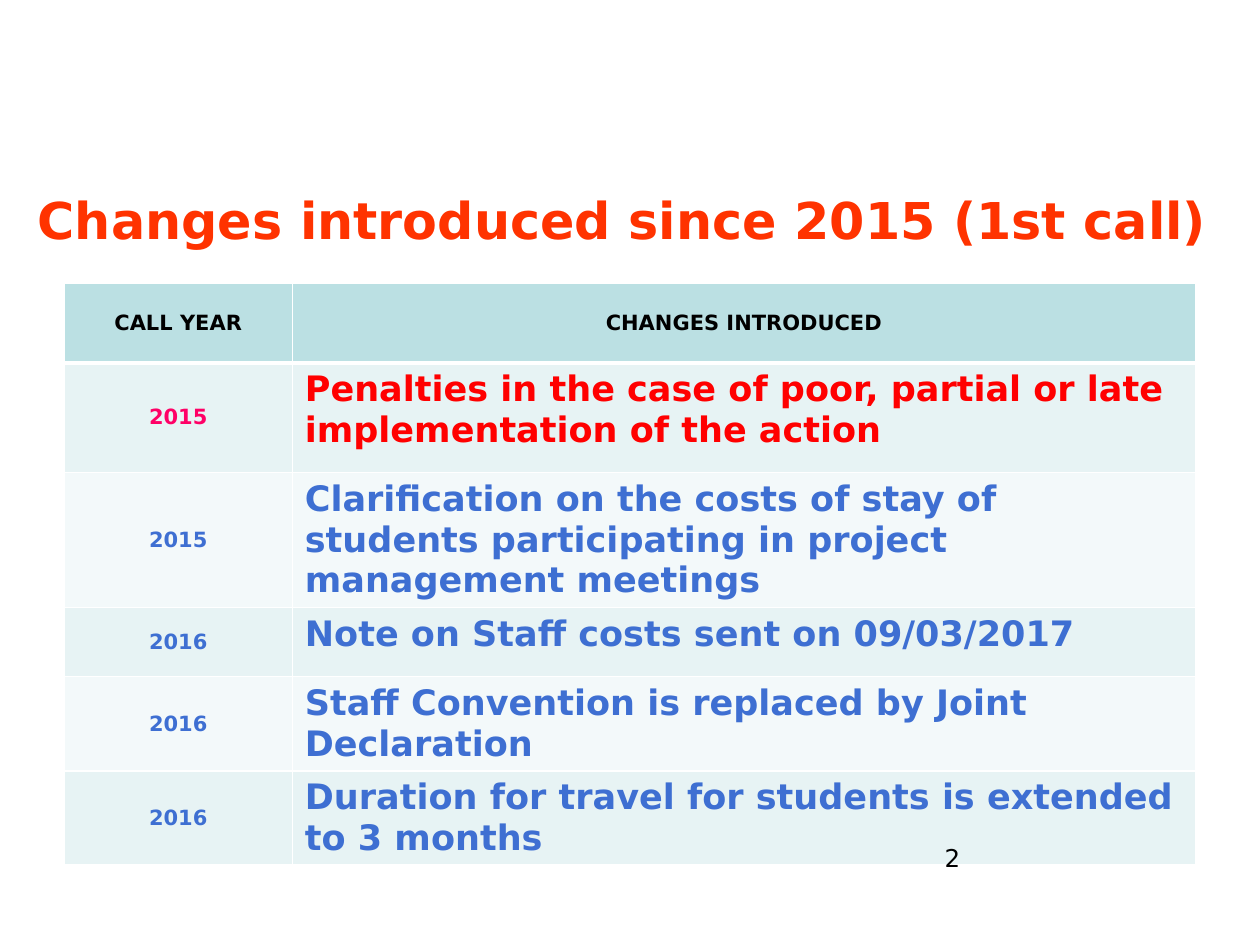
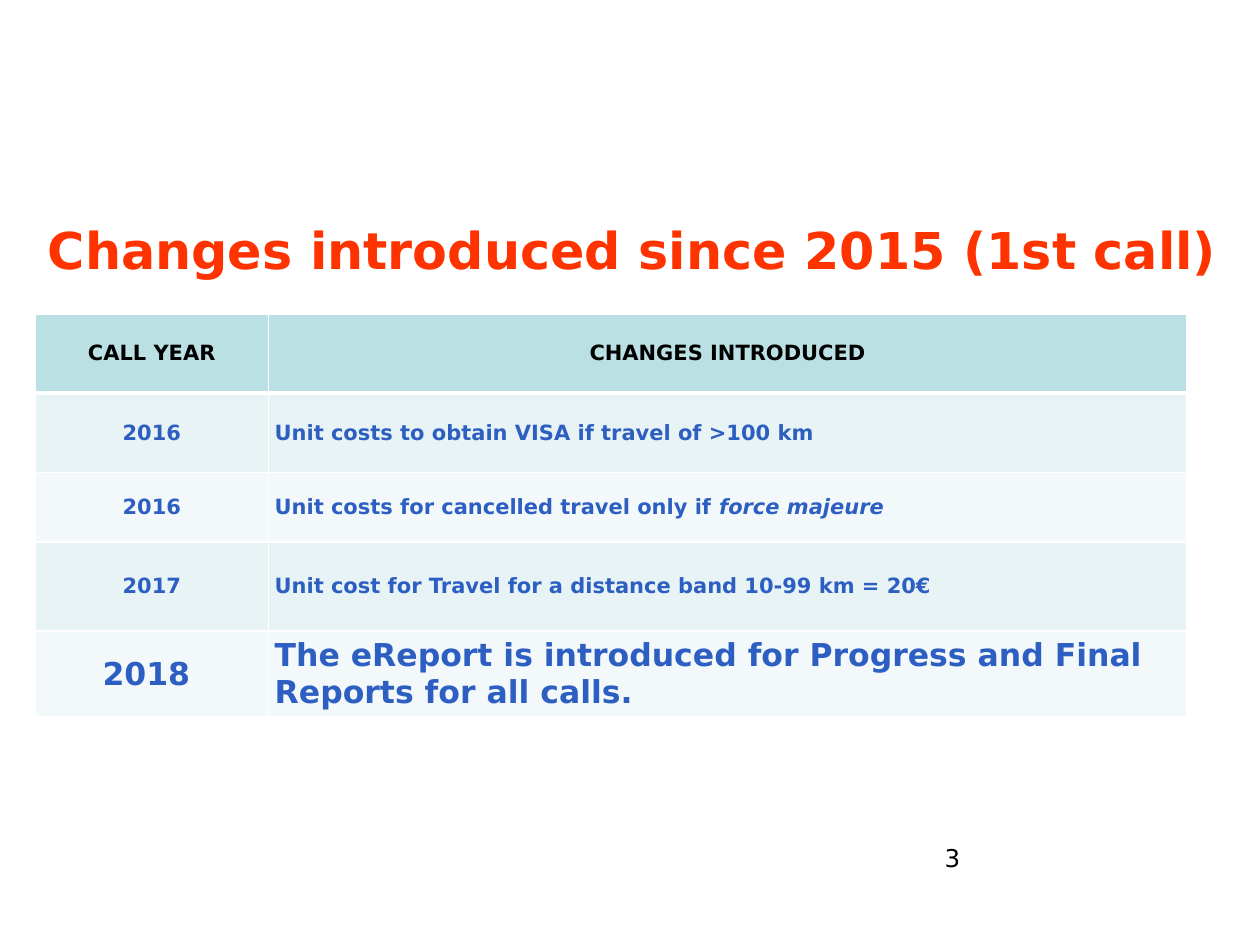
from dataclasses import dataclass

import pptx
import pptx.dml.color
import pptx.enum.text
import pptx.oxml
import pptx.oxml.ns
import pptx.util
from pptx.util import Inches

# Shared look
FONT = "DejaVu Sans"
BLACK, WHITE = "000000", "FFFFFF"
TITLE_COLOUR = "FF3300"
HEADER_FILL = "BBE0E3"
BAND_FILLS = ("E7F3F4", "F3F9FA")
RED, PINK, BLUE, DEEP_BLUE = "FF0000", "FF0066", "3E6FD2", "2D5EC1"

TITLE = "Changes introduced since 2015 (1st call)"
HEADINGS = ("CALL YEAR", "CHANGES INTRODUCED")
HEADER_HEIGHT = 0.63
ALIGN = pptx.enum.text.PP_ALIGN
ANCHOR = pptx.enum.text.MSO_ANCHOR


@dataclass(frozen=True)
class Change:
    """One table row: the call year and what changed."""
    year: str
    text: str
    height: float
    colour: str
    year_size: int = 12
    text_size: int = 20
    anchor: ANCHOR = ANCHOR.TOP
    italic_ending: str = ""
    year_colour: str = ""


@dataclass(frozen=True)
class ChangesPage:
    number: str
    title_left: float
    title_top: float
    table_left: float
    table_top: float
    columns: tuple[float, float]
    side_margin: float
    changes: tuple[Change, ...]


def unit_cost(year: str, text: str, height: float, italic_ending: str = "") -> Change:
    return Change(year, text, height, DEEP_BLUE, text_size=12,
                  anchor=ANCHOR.MIDDLE, italic_ending=italic_ending)


PAGES = (
    ChangesPage("2", 0.2, 1.23, 0.51, 2.25, (1.81, 7.17), 0.1, (
        Change("2015", "Penalties in the case of poor, partial or late "
               "implementation of the action", 0.87, RED, year_colour=PINK),
        Change("2015", "Clarification on the costs of stay of students "
               "participating in project management meetings", 1.07, BLUE),
        Change("2016", "Note on Staff costs sent on 09/03/2017", 0.55, BLUE),
        Change("2016", "Staff Convention is replaced by Joint Declaration", 0.75, BLUE),
        Change("2016", "Duration for travel for students is extended to 3 months",
               0.74, BLUE),
    )),
    ChangesPage("3", 0.28, 1.47, 0.28, 2.49, (1.85, 7.29), 0.05, (
        unit_cost("2016", "Unit costs to obtain VISA if travel of >100 km", 0.63),
        unit_cost("2016", "Unit costs for cancelled travel only if ", 0.55,
                  "force majeure"),
        unit_cost("2017", "Unit cost for Travel for a distance band 10-99 km = 20€", 0.71),
        Change("2018 ", "The eReport is introduced for Progress and Final "
               "Reports for all calls.", 0.67, DEEP_BLUE, year_size=18, text_size=18),
    )),
)


def rgb(colour: str) -> pptx.dml.color.RGBColor:
    return pptx.dml.color.RGBColor.from_string(colour)


def add_run(paragraph, text: str, size: float, colour: str,
            bold: bool = True, italic: bool = False) -> None:
    run = paragraph.add_run()
    run.text = text
    run.font.name = FONT
    run.font.size = pptx.util.Pt(size)
    run.font.bold = bold
    run.font.italic = italic
    run.font.color.rgb = rgb(colour)


def add_borders(cell, bottom: float) -> None:
    """Draw white borders; they must precede the fill in the cell properties."""
    properties = cell._tc.get_or_add_tcPr()
    for side, points in (("L", 1), ("R", 1), ("T", 1), ("B", bottom)):
        properties.append(pptx.oxml.parse_xml(
            f'<a:ln{side} {pptx.oxml.ns.nsdecls("a")} w="{pptx.util.Pt(points)}">'
            f'<a:solidFill><a:srgbClr val="{WHITE}"/></a:solidFill></a:ln{side}>'))


def format_cell(cell, fill: str, margin: float, alignment: ALIGN,
                anchor: ANCHOR = ANCHOR.MIDDLE, bottom_border: float = 1):
    """Style the cell and return its paragraph."""
    add_borders(cell, bottom_border)
    cell.fill.solid()
    cell.fill.fore_color.rgb = rgb(fill)
    cell.margin_left = cell.margin_right = Inches(margin)
    cell.margin_top = cell.margin_bottom = Inches(0.05)
    cell.vertical_anchor = anchor
    paragraph = cell.text_frame.paragraphs[0]
    paragraph.alignment = alignment
    return paragraph


def add_title(slide, left: float, top: float) -> None:
    title = slide.shapes.title
    title.left, title.top = Inches(left), Inches(top)
    title.width, title.height = Inches(9.53), Inches(1.02)
    frame = title.text_frame
    frame.word_wrap = True
    frame.auto_size = pptx.enum.text.MSO_AUTO_SIZE.NONE
    frame.vertical_anchor = ANCHOR.MIDDLE
    frame.paragraphs[0].alignment = ALIGN.LEFT
    add_run(frame.paragraphs[0], TITLE, 29, TITLE_COLOUR)


def add_changes_table(slide, page: ChangesPage) -> None:
    heights = [HEADER_HEIGHT] + [change.height for change in page.changes]
    table = slide.shapes.add_table(
        len(heights), len(page.columns), Inches(page.table_left), Inches(page.table_top),
        Inches(sum(page.columns)), Inches(sum(heights))).table
    for column, width in zip(table.columns, page.columns):
        column.width = Inches(width)
    for row, height in zip(table.rows, heights):
        row.height = Inches(height)

    # Header row
    for column, heading in enumerate(HEADINGS):
        paragraph = format_cell(table.cell(0, column), HEADER_FILL, page.side_margin,
                                ALIGN.CENTER, bottom_border=3)
        add_run(paragraph, heading, 12, BLACK)

    # Banded rows
    for index, change in enumerate(page.changes):
        fill = BAND_FILLS[index % 2]
        year = format_cell(table.cell(index + 1, 0), fill, page.side_margin, ALIGN.CENTER)
        add_run(year, change.year, change.year_size, change.year_colour or change.colour)
        description = format_cell(table.cell(index + 1, 1), fill, page.side_margin,
                                  ALIGN.LEFT, change.anchor)
        add_run(description, change.text, change.text_size, change.colour)
        if change.italic_ending:
            add_run(description, change.italic_ending, change.text_size,
                    change.colour, italic=True)


def add_page_number(slide, number: str) -> None:
    footer = slide.shapes.add_textbox(Inches(5.39), Inches(6.64), Inches(2.33), Inches(0.52))
    footer.text_frame.word_wrap = True
    paragraph = footer.text_frame.paragraphs[0]
    paragraph.alignment = ALIGN.RIGHT
    add_run(paragraph, number, 14, BLACK, bold=False)


def main() -> None:
    presentation = pptx.Presentation()
    presentation.slide_width, presentation.slide_height = Inches(10), Inches(7.5)
    title_only = presentation.slide_layouts[5]
    for page in PAGES:
        slide = presentation.slides.add_slide(title_only)
        slide.background.fill.solid()
        slide.background.fill.fore_color.rgb = rgb(WHITE)
        add_title(slide, page.title_left, page.title_top)
        add_changes_table(slide, page)
        add_page_number(slide, page.number)
    presentation.save("out.pptx")


if __name__ == "__main__":
    main()
